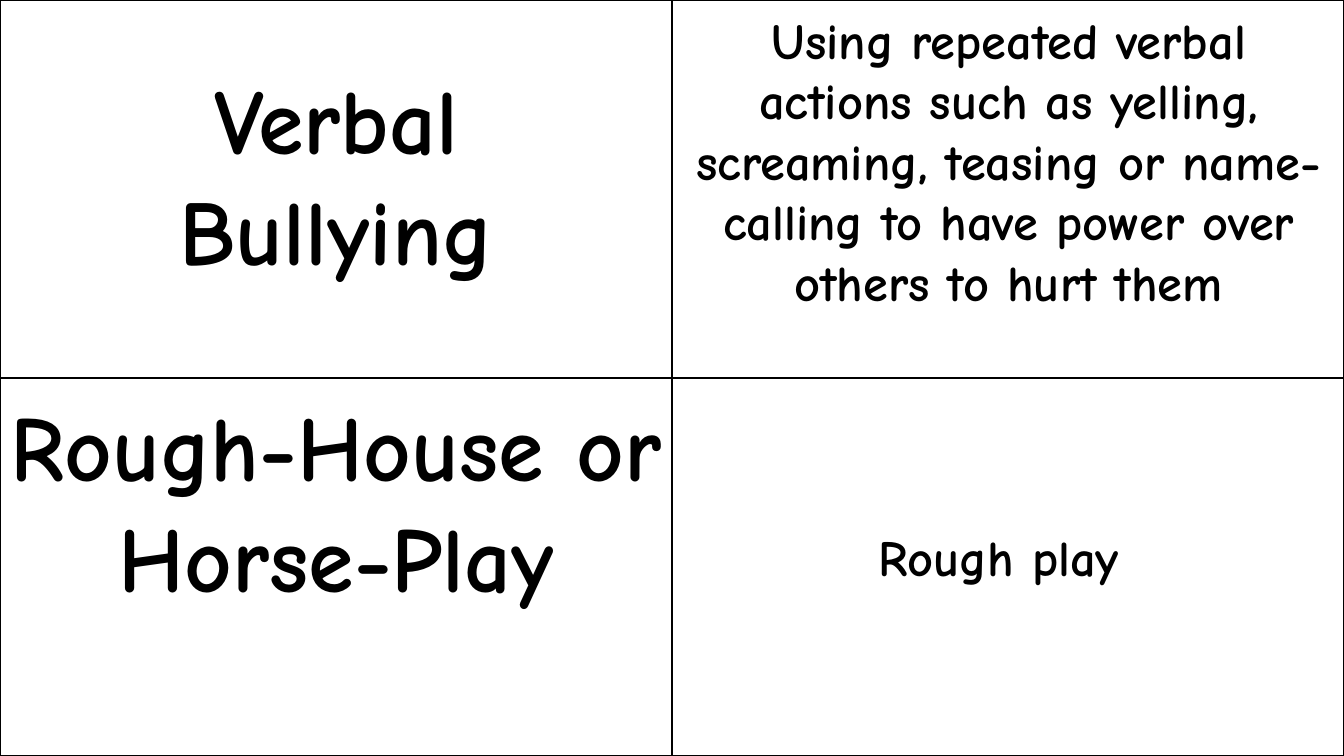
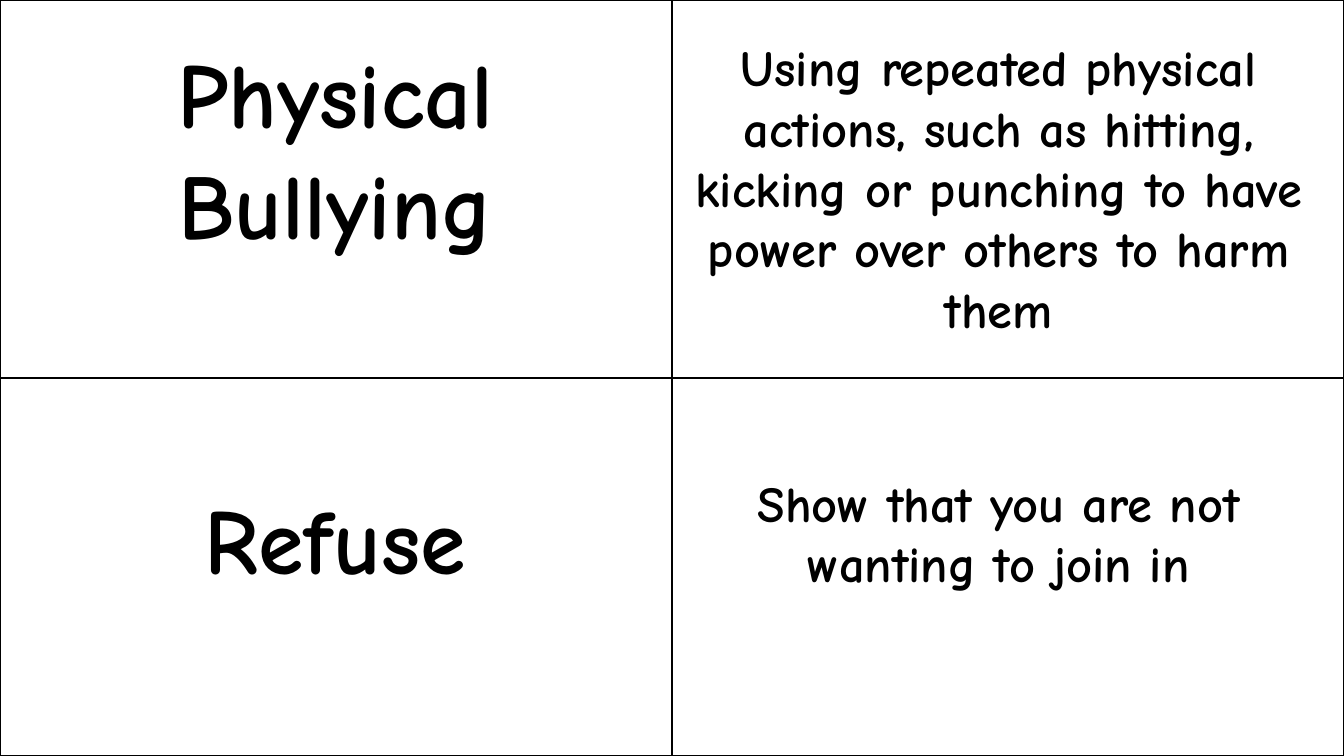
from dataclasses import dataclass

from pptx import Presentation
from pptx.dml.color import RGBColor
from pptx.enum.shapes import MSO_SHAPE as Shape
from pptx.enum.text import MSO_AUTO_SIZE as Fit, PP_ALIGN as Align
from pptx.slide import Slide
from pptx.util import Inches, Pt


@dataclass(frozen=True)
class Theme:
    ink: RGBColor = RGBColor(0, 0, 0)
    paper: RGBColor = RGBColor(255, 255, 255)
    font: str = "Comic Neue"
    term: Pt = Pt(66)
    sense: Pt = Pt(36)
    rule: Pt = Pt(1)


@dataclass(frozen=True)
class Label:
    text: str
    size: Pt
    left: float
    top: float
    width: float
    height: float


THEME = Theme()
WIDTH, HEIGHT = 13.33, 7.5
ROWS = COLS = 2

DECK = [
    [
        Label("Verbal Bullying", THEME.term, 0.36, 0.57, 5.95, 2.32),
        Label("Using repeated verbal actions such as yelling, screaming, teasing "
              "or name-calling to have power over others to hurt them",
              THEME.sense, 6.78, 0.04, 6.45, 3.74),
        Label("Rough-House or\nHorse-Play", THEME.term, -0.13, 3.81, 6.93, 3.43),
        Label("Rough play", THEME.sense, 6.93, 5.17, 5.95, 0.71),
    ],
    [
        Label("Physical Bullying", THEME.term, 0.35, 0.31, 5.95, 2.32),
        Label("Using repeated physical actions, such as hitting, kicking or "
              "punching to have power over others to harm them",
              THEME.sense, 6.57, 0.31, 6.67, 3.13),
        Label("Refuse", THEME.term, 0.35, 4.73, 5.95, 1.21),
        Label("Show that you are not wanting to join in",
              THEME.sense, 6.93, 4.63, 5.95, 1.31),
    ],
]


def draw_cards(slide: Slide) -> None:
    """Divide the whole slide into equal outlined cards."""
    wide, high = Inches(WIDTH / COLS), Inches(HEIGHT / ROWS)
    for row in range(ROWS):
        for col in range(COLS):
            card = slide.shapes.add_shape(
                Shape.RECTANGLE, col * wide, row * high, wide, high)
            card.shadow.inherit = False
            card.fill.solid()
            card.fill.fore_color.rgb = THEME.paper
            card.line.color.rgb = THEME.ink
            card.line.width = THEME.rule


def draw_label(slide: Slide, label: Label) -> None:
    box = slide.shapes.add_textbox(
        Inches(label.left), Inches(label.top),
        Inches(label.width), Inches(label.height))
    frame = box.text_frame
    frame.word_wrap = True
    frame.auto_size = Fit.SHAPE_TO_FIT_TEXT
    frame.text = label.text
    for para in frame.paragraphs:
        para.alignment = Align.CENTER
        for run in para.runs:
            run.font.name = THEME.font
            run.font.size = label.size
            run.font.bold = True
            run.font.color.rgb = THEME.ink


def main() -> None:
    deck = Presentation()
    deck.slide_width, deck.slide_height = Inches(WIDTH), Inches(HEIGHT)
    blank = deck.slide_layouts.get_by_name("Blank")
    for labels in DECK:
        slide = deck.slides.add_slide(blank)
        draw_cards(slide)
        for label in labels:
            draw_label(slide, label)
    deck.save("out.pptx")


if __name__ == "__main__":
    main()
